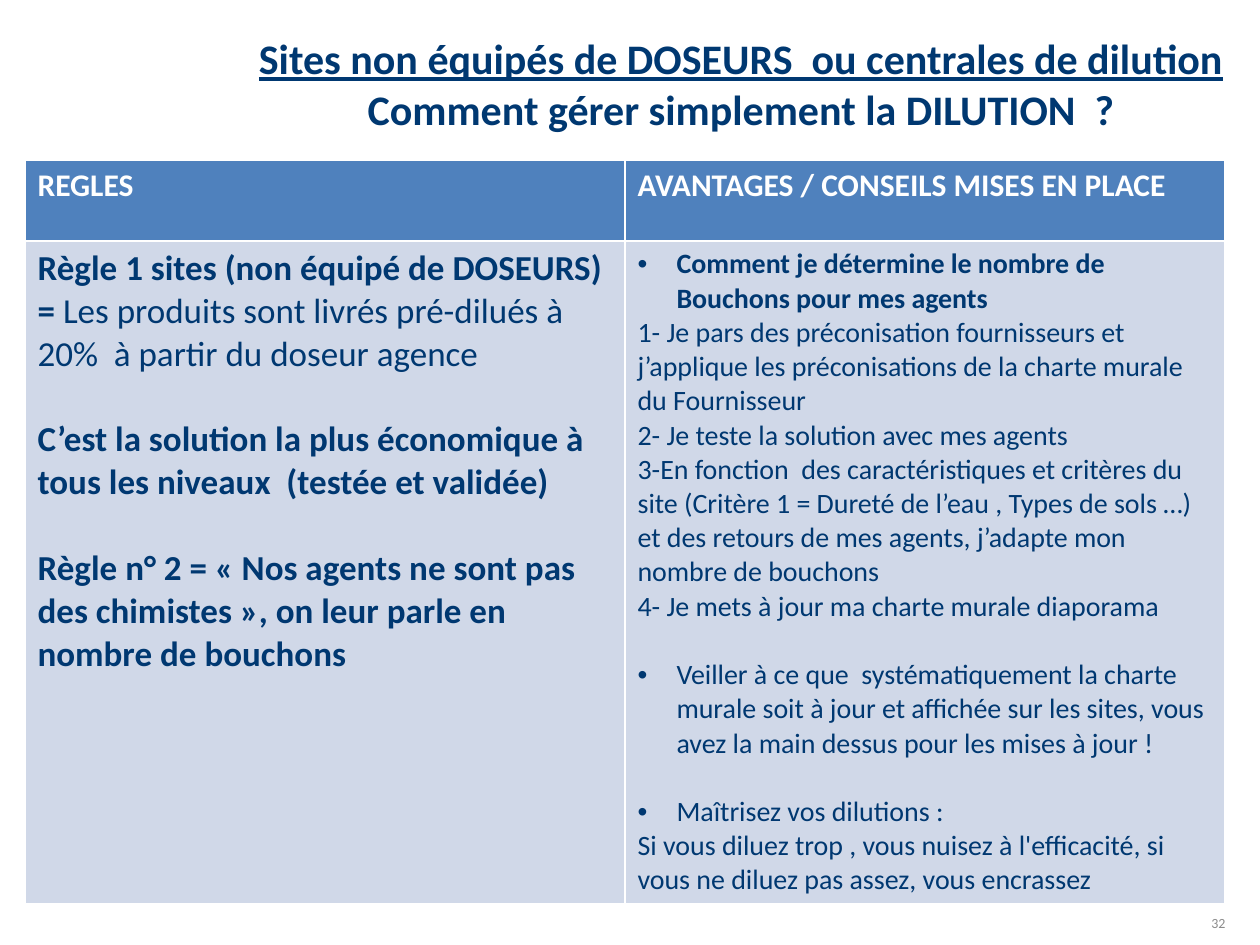
"""Build the slide on dilution rules for sites without a dosing station."""
from dataclasses import dataclass

from lxml import etree
from pptx import Presentation
from pptx.dml.color import RGBColor
from pptx.enum.text import MSO_ANCHOR, MSO_AUTO_SIZE, PP_ALIGN
from pptx.oxml.ns import qn
from pptx.util import Emu, Pt

CENTER, RIGHT = PP_ALIGN.CENTER, PP_ALIGN.RIGHT
MIDDLE = MSO_ANCHOR.MIDDLE
NO_FIT = MSO_AUTO_SIZE.NONE


@dataclass(frozen=True)
class Theme:
    font: str = "Calibri"
    navy: str = "003871"
    white: str = "FFFFFF"
    grey: str = "8C8C8C"
    header_fill: str = "4F81BD"
    body_fill: str = "D0D8E8"
    title_size: int = 24
    header_size: int = 18
    rules_size: int = 20
    advice_size: int = 16
    number_size: int = 8
    line_height: float = 1.22


THEME = Theme()
PX_PER_INCH = 126
BULLET_INDENT = 39

TITLE = [
    "Sites non équipés de DOSEURS  ou centrales de dilution",
    "Comment gérer simplement la DILUTION  ?",
]
HEADERS = ["REGLES", "AVANTAGES / CONSEILS MISES EN PLACE"]
PAGE_NUMBER = "32"

BOLD, PLAIN = True, False
BULLET, GAP = "bullet", "gap"
RULES = [
    ([("Règle 1 sites (non équipé de DOSEURS) = ", BOLD),
      ("Les produits sont livrés pré-dilués à 20%  à partir du doseur agence", PLAIN)], ()),
    ([("C’est la solution la plus économique à tous les niveaux  (testée et validée)", BOLD)],
     (GAP,)),
    ([("Règle n° 2 = « Nos agents ne sont pas des chimistes », "
       "on leur parle en nombre de bouchons", BOLD)], (GAP,)),
]
ADVICE = [
    ([("Comment je détermine le nombre de Bouchons pour mes agents", BOLD)], (BULLET,)),
    ([("1- Je pars des préconisation fournisseurs et j’applique les préconisations "
       "de la charte murale du Fournisseur", PLAIN)], ()),
    ([("2- Je teste la solution avec mes agents", PLAIN)], ()),
    ([("3-En fonction  des caractéristiques et critères du site (Critère 1 = Dureté de l’eau , "
       "Types de sols …) et des retours de mes agents, j’adapte mon nombre de bouchons",
       PLAIN)], ()),
    ([("4- Je mets à jour ma charte murale diaporama", PLAIN)], ()),
    ([("Veiller à ce que  systématiquement la charte murale soit à jour et affichée sur les "
       "sites, vous avez la main dessus pour les mises à jour !", PLAIN)], (BULLET, GAP)),
    ([("Maîtrisez vos dilutions :", PLAIN)], (BULLET, GAP)),
    ([("Si vous diluez trop , vous nuisez à l'efficacité, si vous ne diluez pas assez, "
       "vous encrassez", PLAIN)], ()),
]


def px(length):
    return Emu(round(length * 914400 / PX_PER_INCH))


def style(font, size, color, bold=False):
    font.name = THEME.font
    font.size = Pt(size)
    font.bold = bold
    font.color.rgb = RGBColor.from_string(color)


def add_bullet(paragraph):
    properties = paragraph._p.get_or_add_pPr()
    properties.set("marL", str(px(BULLET_INDENT)))
    properties.set("indent", str(-px(BULLET_INDENT)))
    etree.SubElement(properties, qn("a:buFont")).set("typeface", "Arial")
    etree.SubElement(properties, qn("a:buChar")).set("char", "•")


def fill_cell(cell, color):
    cell.fill.solid()
    cell.fill.fore_color.rgb = RGBColor.from_string(color)


def write_paragraphs(frame, paragraphs, size):
    for index, (runs, marks) in enumerate(paragraphs):
        paragraph = frame.add_paragraph() if index else frame.paragraphs[0]
        if GAP in marks:
            paragraph.space_before = Pt(round(size * THEME.line_height, 1))
        if BULLET in marks:
            add_bullet(paragraph)
        for text, bold in runs:
            run = paragraph.add_run()
            run.text = text
            style(run.font, size, THEME.navy, bold)


def add_title(slide):
    title = slide.shapes.title
    title.left, title.top, title.width, title.height = map(px, (174, 6, 1134, 154))
    frame = title.text_frame
    frame.text = "\n".join(TITLE)
    frame.auto_size = NO_FIT
    frame.word_wrap = True
    frame.vertical_anchor = MIDDLE
    for index, paragraph in enumerate(frame.paragraphs):
        paragraph.alignment = CENTER
        font = paragraph.runs[0].font
        style(font, THEME.title_size, THEME.navy, True)
        font.underline = index == 0


def add_rules_table(slide):
    table = slide.shapes.add_table(2, 2, *map(px, (25, 160, 1200, 740))).table
    for row, height in zip(table.rows, (81, 659)):
        row.height = px(height)
    columns = zip(HEADERS, (RULES, ADVICE), (THEME.rules_size, THEME.advice_size))
    for index, (header, paragraphs, size) in enumerate(columns):
        heading, body = table.cell(0, index), table.cell(1, index)
        heading.text_frame.text = header
        style(heading.text_frame.paragraphs[0].runs[0].font,
              THEME.header_size, THEME.white, True)
        fill_cell(heading, THEME.header_fill)
        write_paragraphs(body.text_frame, paragraphs, size)
        fill_cell(body, THEME.body_fill)


def add_page_number(slide):
    frame = slide.shapes.add_textbox(*map(px, (1144, 910, 94, 25))).text_frame
    frame.word_wrap = True
    frame.vertical_anchor = MIDDLE
    frame.text = PAGE_NUMBER
    paragraph = frame.paragraphs[0]
    paragraph.alignment = RIGHT
    style(paragraph.runs[0].font, THEME.number_size, THEME.grey)


def main():
    deck = Presentation()
    deck.slide_width, deck.slide_height = px(1260), px(945)
    slide = deck.slides.add_slide(deck.slide_layouts[5])
    add_title(slide)
    add_rules_table(slide)
    add_page_number(slide)
    deck.save("out.pptx")


if __name__ == "__main__":
    main()
